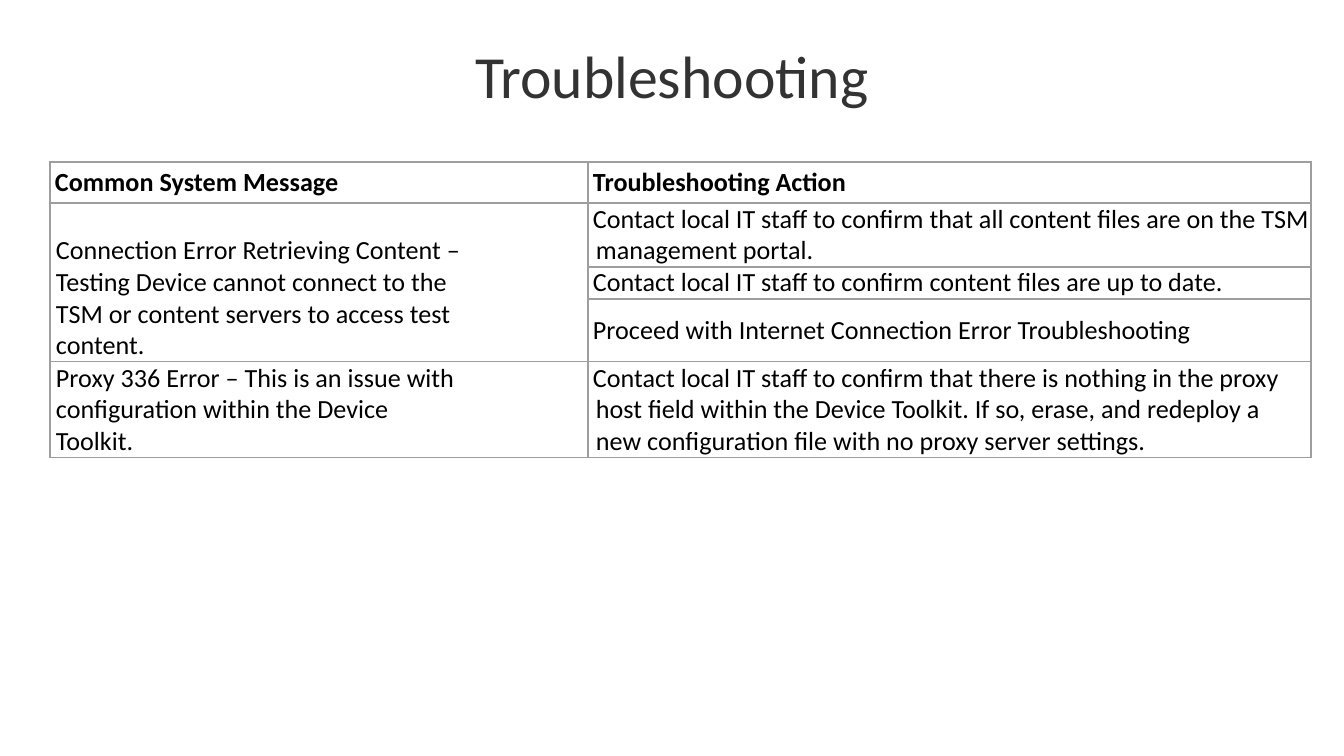
from lxml import etree
from pptx import Presentation
from pptx.dml.color import RGBColor
from pptx.enum.text import MSO_ANCHOR as ANCHOR, PP_ALIGN as ALIGN
from pptx.oxml.ns import qn
from pptx.util import Pt

PX = 914400 / 134.4
COLORS = {"title": "333333", "text": "000000", "border": "9E9E9E"}
FONT = "Calibri"


def px(n):
    return round(n * PX)


def style(p, size, color, bold=False):
    p.font.name = FONT
    p.font.size = Pt(size)
    p.font.bold = bold
    p.font.color.rgb = RGBColor.from_string(COLORS[color])


prs = Presentation()
prs.slide_width, prs.slide_height = px(1344), px(756)
s = prs.slides.add_slide(prs.slide_layouts[5])

title = s.shapes.title
title.left, title.top, title.width, title.height = 0, px(4), px(1344), px(142)
tf = title.text_frame
tf.text = "Troubleshooting"
tf.vertical_anchor = ANCHOR.MIDDLE
p = tf.paragraphs[0]
p.alignment = ALIGN.CENTER
style(p, 32, "title")

col_widths = [538, 723]
row_heights = [41, 64, 32, 63, 96]
rows = [
    ("Common System Message", "Troubleshooting Action"),
    ("Connection Error Retrieving Content –\n"
     "Testing Device cannot connect to the\n"
     "TSM or content servers to access test\n"
     "content.",
     "Contact local IT staff to confirm that all content files are on the TSM management portal."),
    ("", "Contact local IT staff to confirm content files are up to date."),
    ("", "Proceed with Internet Connection Error Troubleshooting"),
    ("Proxy 336 Error – This is an issue with\n"
     "configuration within the Device\n"
     "Toolkit.",
     "Contact local IT staff to confirm that there is nothing in the proxy host field within "
     "the Device Toolkit. If so, erase, and redeploy a new configuration file with no proxy "
     "server settings."),
]

table = s.shapes.add_table(len(rows), len(col_widths), px(50), px(162),
                           px(sum(col_widths)), px(sum(row_heights))).table
table.first_row = table.horz_banding = False
for column, width in zip(table.columns, col_widths):
    column.width = px(width)
for row, height in zip(table.rows, row_heights):
    row.height = px(height)

for i, texts in enumerate(rows):
    for j, text in enumerate(texts):
        cell = table.cell(i, j)
        cell.text = text
        cell.vertical_anchor = ANCHOR.MIDDLE
        cell.margin_left = cell.margin_right = cell.margin_top = cell.margin_bottom = 0
        tcPr = cell._tc.get_or_add_tcPr()
        for side in ("lnL", "lnR", "lnT", "lnB"):
            ln = etree.SubElement(tcPr, qn(f"a:{side}"), w=str(Pt(0.75)))
            fill = etree.SubElement(ln, qn("a:solidFill"))
            etree.SubElement(fill, qn("a:srgbClr"), val=COLORS["border"])
        cell.fill.background()
        hanging = i == 0 or j == 1
        for p in cell.text_frame.paragraphs:
            pPr = p._p.get_or_add_pPr()
            pPr.set("marL", str(px(8 if hanging else 6)))
            pPr.set("indent", str(px(-3 if hanging else 0)))
            style(p, 14, "text", bold=i == 0)

message = table.cell(1, 0)
message.merge(table.cell(3, 0))
message.vertical_anchor = ANCHOR.BOTTOM

prs.save("out.pptx")
